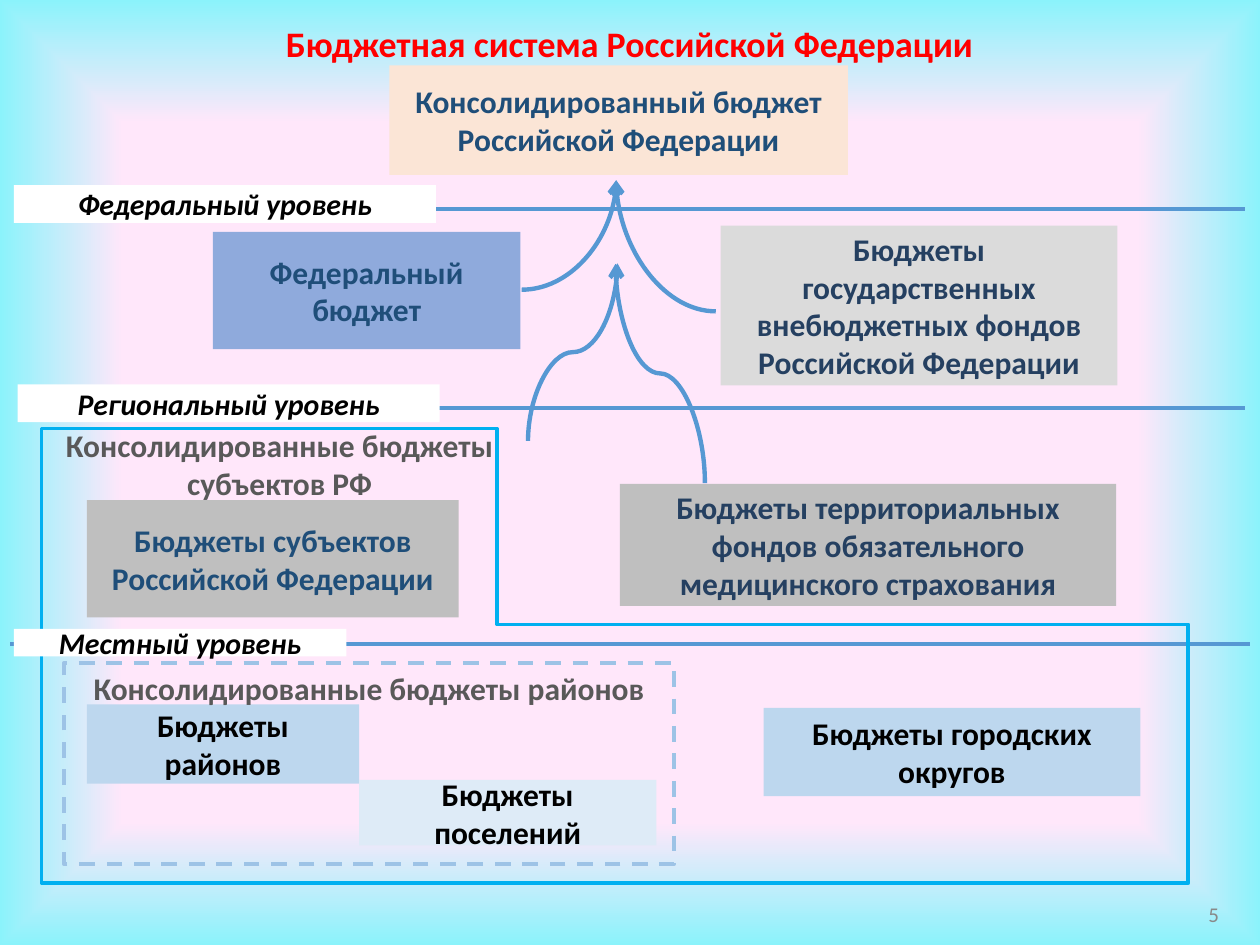
from dataclasses import dataclass
from typing import Optional

import pptx
import pptx.util
import pptx.dml.color
import pptx.enum.dml
import pptx.enum.shapes
import pptx.enum.text
import pptx.oxml
import pptx.oxml.ns

Pt = pptx.util.Pt
CONNECTOR = pptx.enum.shapes.MSO_CONNECTOR
ALIGN = pptx.enum.text.PP_ALIGN
ANCHOR = pptx.enum.text.MSO_ANCHOR
NS = pptx.oxml.ns.nsdecls("a", "p")


@dataclass(frozen=True)
class Theme:
    font: str = "Calibri"
    title_size: float = 20.5
    body_size: float = 18
    level_size: float = 17.1
    number_size: float = 12
    red: str = "FF0000"
    black: str = "000000"
    white: str = "FFFFFF"
    navy: str = "1F4E79"
    slate: str = "254061"
    dark_grey: str = "595959"
    number_grey: str = "898989"
    grey: str = "BFBFBF"
    light_grey: str = "DBDBDB"
    peach: str = "FBE5D6"
    periwinkle: str = "8FAADC"
    sky: str = "BDD7EE"
    pale_sky: str = "DEEBF7"
    dash_blue: str = "9DC3E6"
    frame_blue: str = "00B0F0"
    line_blue: str = "5698D3"
    background: tuple = ((74, "FFE7FA"), (100, "8BF3FB"),
                         (100, "B5D2EC"), (100, "CEE1F2"))


T = Theme()


@dataclass(frozen=True)
class Box:
    text: str
    bounds: tuple  # left, top, width, height
    fill: Optional[str] = None
    color: str = T.black
    inset: tuple = (7.2, 3.6)
    dashed: bool = False


@dataclass(frozen=True)
class Level:
    label: Box
    line_y: float
    line_left: float = 14.4
    line_right: float = 711.4


@dataclass(frozen=True)
class Curve:
    preset: str
    ends: tuple  # x1, y1, x2, y2 before rotation
    rotation: int = 0


LEVELS = [
    Level(Box("Местный уровень", (7.9, 359.3, 190.1, 15.8), T.white), 367.9, 5.8, 714.2),
    Level(Box("Региональный уровень", (10.1, 219.6, 241.2, 21.6), T.white), 233.3),
    Level(Box("Федеральный уровень", (7.9, 105.8, 241.2, 21.6), T.white), 119.5),
]

BOXES = [
    Box("Бюджеты районов", (49.7, 402.5, 155.5, 45.4), T.sky),
    Box("Бюджеты поселений", (205.2, 445.7, 169.9, 37.4), T.pale_sky),
    Box("Бюджеты городских округов", (436.3, 404.6, 215.3, 50.4), T.sky),
    Box("Консолидированные бюджеты районов", (36.7, 378.7, 348.5, 115.2),
        color=T.dark_grey, dashed=True),
    Box("Бюджеты субъектов Российской Федерации",
        (49.7, 285.8, 212.4, 67), T.grey, T.navy),
    Box("Бюджеты территориальных фондов обязательного медицинского страхования",
        (354.2, 276.5, 283.7, 69.8), T.grey, T.slate, inset=(0, 0)),
    Box("Консолидированные бюджеты субъектов РФ", (29.5, 239.8, 260.6, 50.4),
        color=T.dark_grey),
    Box("Федеральный бюджет", (121.7, 132.5, 175.7, 67), T.periwinkle, T.navy),
    Box("Бюджеты государственных внебюджетных фондов Российской Федерации",
        (411.8, 128.9, 226.8, 91.4), T.light_grey, T.slate),
    Box("Консолидированный бюджет Российской Федерации",
        (222.5, 37.4, 262.1, 62.6), T.peach, T.navy),
]

CURVES = [
    Curve("curvedConnector2", (298.1, 165.6, 352.1, 103)),
    Curve("curvedConnector2", (352.1, 103, 409, 177.9), 180),
    Curve("curvedConnector3", (378, 226.8, 276.5, 175.7), 90),
    Curve("curvedConnector3", (314.6, 239, 439.9, 187.9), 270),
]

# Corners of the regional frame
FRAME = [(23.8, 244.8), (284, 244.8), (284, 356.8), (679, 356.8),
         (679, 504.7), (23.8, 504.7)]


def rgb(value: str):
    return pptx.dml.color.RGBColor.from_string(value)


def set_text(sp, text: str, size: float, color: str, align=ALIGN.CENTER,
             anchor=ANCHOR.MIDDLE, inset=(7.2, 3.6), **font):
    tf = sp.text_frame
    x, y = map(Pt, inset)
    frame = dict(word_wrap=True, auto_size=pptx.enum.text.MSO_AUTO_SIZE.NONE,
                 vertical_anchor=anchor, margin_left=x, margin_right=x,
                 margin_top=y, margin_bottom=y)
    for name, value in frame.items():
        setattr(tf, name, value)
    p = tf.paragraphs[0]
    p.alignment = align
    r = p.add_run()
    r.text = text
    for name, value in dict(name=T.font, size=Pt(size), **font).items():
        setattr(r.font, name, value)
    r.font.color.rgb = rgb(color)
    return p


def style_line(sp, color: str, width: float):
    sp.line.color.rgb = rgb(color)
    sp.line.width = Pt(width)


def add_box(slide, box: Box, size: float = T.body_size, italic: bool = False):
    sp = slide.shapes.add_shape(pptx.enum.shapes.MSO_SHAPE.RECTANGLE, *map(Pt, box.bounds))
    sp.shadow.inherit = False
    sp.line.fill.background()
    sp.fill.background()
    if box.fill:
        sp.fill.solid()
        sp.fill.fore_color.rgb = rgb(box.fill)
    if box.dashed:
        style_line(sp, T.dash_blue, 2.25)
        sp.line.dash_style = pptx.enum.dml.MSO_LINE.DASH
    set_text(sp, box.text, size, box.color, inset=box.inset, bold=True, italic=italic,
             anchor=ANCHOR.MIDDLE if box.fill else ANCHOR.TOP)


def add_line(slide, kind, ends: tuple, width: float):
    c = slide.shapes.add_connector(kind, *map(Pt, ends))
    style_line(c, T.line_blue, width)
    c._element.spPr.append(pptx.oxml.parse_xml(f"<a:effectLst {NS}/>"))
    return c


def add_curve(slide, curve: Curve):
    c = add_line(slide, CONNECTOR.CURVE, curve.ends, 2.5)
    spPr = c._element.spPr
    spPr.find(pptx.oxml.ns.qn("a:prstGeom")).set("prst", curve.preset)
    spPr.find(pptx.oxml.ns.qn("a:xfrm")).set("rot", str(curve.rotation * 60000))
    spPr.find(pptx.oxml.ns.qn("a:ln")).append(
        pptx.oxml.parse_xml(f'<a:tailEnd {NS} type="arrow"/>'))


def add_frame(slide):
    start, *rest = [tuple(map(Pt, corner)) for corner in FRAME]
    builder = slide.shapes.build_freeform(*start)
    builder.add_line_segments(rest, close=True)
    sp = builder.convert_to_shape()
    sp.shadow.inherit = False
    sp.fill.background()
    style_line(sp, T.frame_blue, 2)


def set_background(slide):
    stops = "".join(f'<a:gs pos="{pos * 1000}"><a:srgbClr val="{color}"/></a:gs>'
                    for pos, color in T.background)
    slide._element.cSld.insert(0, pptx.oxml.parse_xml(
        f'<p:bg {NS}><p:bgPr><a:gradFill><a:gsLst>{stops}</a:gsLst>'
        '<a:path path="shape"><a:fillToRect l="50000" t="50000" r="50000" '
        'b="50000"/></a:path></a:gradFill><a:effectLst/></p:bgPr></p:bg>'))


def main():
    prs = pptx.Presentation()
    prs.slide_width, prs.slide_height = Pt(720), Pt(540)
    slide = prs.slides.add_slide(prs.slide_layouts[5])
    set_background(slide)
    # Title
    title = slide.shapes.title
    for name, value in dict(left=0, top=8.6, width=720, height=34.6).items():
        setattr(title, name, Pt(value))
    p = set_text(title, "Бюджетная система Российской Федерации", T.title_size,
                 T.red, anchor=ANCHOR.TOP, inset=(5, 5), bold=True)
    p.line_spacing = Pt(23.4)
    # Level lines, with the regional frame and the labels over them
    for level in LEVELS:
        add_line(slide, CONNECTOR.STRAIGHT, (level.line_left, level.line_y,
                                             level.line_right, level.line_y), 2)
    add_frame(slide)
    for level in LEVELS:
        add_box(slide, level.label, T.level_size, italic=True)
    # Budgets and the arrows between them
    for box in BOXES:
        add_box(slide, box)
    for curve in CURVES:
        add_curve(slide, curve)
    # Slide number
    number = slide.shapes.add_textbox(*map(Pt, (683.3, 511.2, 17.3, 22.3)))
    set_text(number, "5", T.number_size, T.number_grey, ALIGN.RIGHT, inset=(4, 3.6))
    prs.save("out.pptx")


if __name__ == "__main__":
    main()
